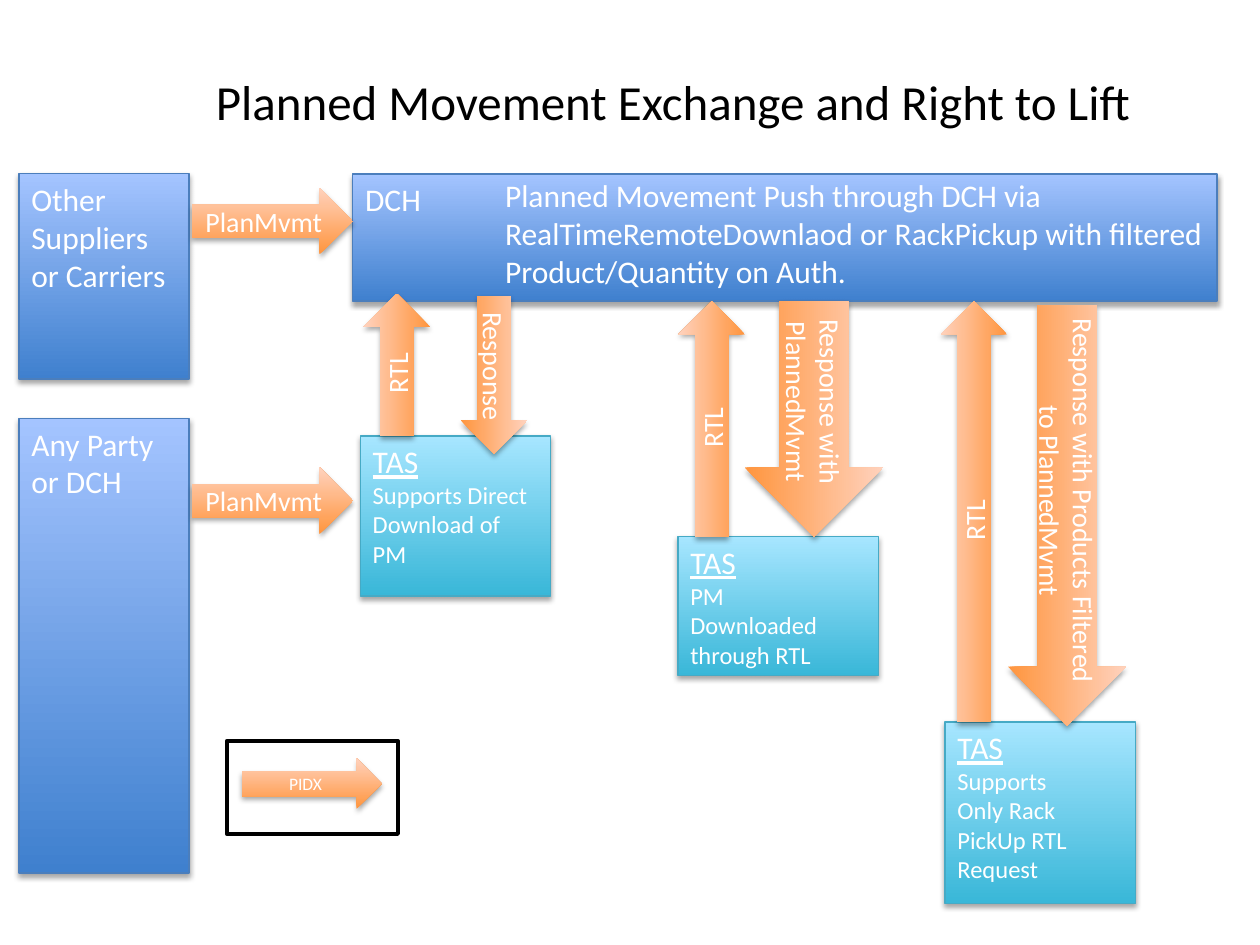
from lxml.etree import SubElement
from pptx import Presentation
from pptx.dml.color import RGBColor
from pptx.enum.shapes import MSO_SHAPE as Preset
from pptx.enum.text import MSO_ANCHOR as Anchor, PP_ALIGN as Align
from pptx.oxml.ns import qn
from pptx.util import Inches, Pt

FONT = "Calibri"
BLACK = RGBColor(0x00, 0x00, 0x00)
WHITE = RGBColor(0xFF, 0xFF, 0xFF)
BLUE_LINE = RGBColor(0x4B, 0x7E, 0xBC)
AQUA_LINE = RGBColor(0x46, 0xAA, 0xC5)
# Gradients run from the bottom colour to the top colour
BLUE = RGBColor(0x3F, 0x80, 0xCE), RGBColor(0xA4, 0xC4, 0xFF)
AQUA = RGBColor(0x39, 0xB7, 0xD8), RGBColor(0xA7, 0xE6, 0xFF)
ORANGE = RGBColor(0xFF, 0x95, 0x3E), RGBColor(0xFF, 0xD2, 0xBD)

TITLE = "Planned Movement Exchange and Right to Lift"
DCH_NOTE = ("Planned Movement Push through DCH via RealTimeRemoteDownlaod "
            "or RackPickup with filtered Product/Quantity on Auth.")

# text, (left, top, width, height)
PARTIES = [
    ("DCH", (2.8, 1.38, 6.86, 1.01)),
    ("Other Suppliers or Carriers", (0.15, 1.38, 1.35, 1.63)),
    ("Any Party or DCH", (0.15, 3.32, 1.35, 3.61)),
]
# lines below the heading, (left, top, width, height)
TERMINALS = [
    (["Supports Direct Download of PM"], (2.86, 3.46, 1.51, 1.27)),
    (["PM", "Downloaded through RTL"], (5.38, 4.26, 1.59, 1.1)),
    (["Supports", "Only Rack PickUp RTL Request"], (7.5, 5.73, 1.51, 1.44)),
]
# label, (left, top, width, height), text size
FLAT_ARROWS = [
    ("PlanMvmt", (1.52, 1.49, 1.28, 0.53), 16),
    ("PlanMvmt", (1.52, 3.71, 1.28, 0.53), 16),
    ("PIDX", (1.92, 6.02, 1.11, 0.4), 10),
]
UP, DOWN = 270, 90
# label, direction, centre x, top, length, thickness
UPRIGHT_ARROWS = [
    ("RTL", UP, 3.15, 2.33, 1.13, 0.53),
    ("Response", DOWN, 3.92, 2.35, 1.25, 0.53),
    ("RTL", UP, 5.65, 2.39, 1.87, 0.53),
    ("Response with PlannedMvmt", DOWN, 6.46, 2.39, 1.87, 1.1),
    ("RTL", UP, 7.73, 2.39, 3.34, 0.53),
    ("Response with Products Filtered to PlannedMvmt", DOWN, 8.47, 2.42, 3.34, 0.94),
]
LEGEND_FRAME = (1.8, 5.88, 1.36, 0.74)


def write(shape, lines, sizes, color=WHITE, align=Align.LEFT, anchor=Anchor.TOP):
    frame = shape.text_frame
    frame.word_wrap = True
    frame.vertical_anchor = anchor
    frame.text = "\n".join(lines)
    for para, size in zip(frame.paragraphs, sizes):
        para.alignment = align
        para.font.name = FONT
        para.font.size = Pt(size)
        para.font.color.rgb = color


def add_shadow(shape):
    """Give the shape a soft shadow straight below it."""
    shape.shadow.inherit = False
    effects = shape._element.spPr.find(qn("a:effectLst"))
    shadow = SubElement(effects, qn("a:outerShdw"), blurRad=str(Pt(3.1)),
                        dist=str(Pt(1.8)), dir="5400000", rotWithShape="0")
    black = SubElement(shadow, qn("a:srgbClr"), val="000000")
    SubElement(black, qn("a:alpha"), val="35000")


def add_block(page, preset, place, gradient, line=None):
    shape = page.shapes.add_shape(preset, *map(Inches, place))
    shape.fill.gradient()
    shape.fill.gradient_angle = 90
    for stop, color in zip(shape.fill.gradient_stops, gradient):
        stop.color.rgb = color
    if line is None:
        shape.line.fill.background()
    else:
        shape.line.color.rgb = line
        shape.line.width = Pt(0.75)
    add_shadow(shape)
    return shape


def add_arrow(page, label, place, size=16, rotation=0):
    arrow = add_block(page, Preset.RIGHT_ARROW, place, ORANGE)
    arrow.rotation = rotation
    write(arrow, [label], [size], align=Align.CENTER, anchor=Anchor.MIDDLE)


def main():
    deck = Presentation()
    deck.slide_width, deck.slide_height = Inches(10), Inches(7.5)
    page = deck.slides.add_slide(deck.slide_layouts[6])

    title = page.shapes.add_textbox(*map(Inches, (1.27, 0.37, 8.14, 0.86)))
    write(title, [TITLE], [28], BLACK, Align.CENTER, Anchor.MIDDLE)

    for text, place in PARTIES:
        party = add_block(page, Preset.RECTANGLE, place, BLUE, BLUE_LINE)
        write(party, [text], [18])

    for lines, place in TERMINALS:
        terminal = add_block(page, Preset.RECTANGLE, place, AQUA, AQUA_LINE)
        write(terminal, ["TAS"] + lines, [18] + [14] * len(lines))
        terminal.text_frame.paragraphs[0].runs[0].font.underline = True

    note = page.shapes.add_textbox(*map(Inches, (3.91, 1.35, 5.75, 1.01)))
    write(note, [DCH_NOTE], [18])

    legend = page.shapes.add_shape(Preset.RECTANGLE, *map(Inches, LEGEND_FRAME))
    legend.shadow.inherit = False
    legend.fill.solid()
    legend.fill.fore_color.rgb = WHITE
    legend.line.color.rgb = BLACK
    legend.line.width = Pt(2)

    for label, place, size in FLAT_ARROWS:
        add_arrow(page, label, place, size)

    for label, direction, center, top, length, thickness in UPRIGHT_ARROWS:
        # A turned shape is placed by its unturned frame around the same centre
        place = (center - length / 2, top + (length - thickness) / 2, length, thickness)
        add_arrow(page, label, place, rotation=direction)

    deck.save("out.pptx")


if __name__ == "__main__":
    main()
